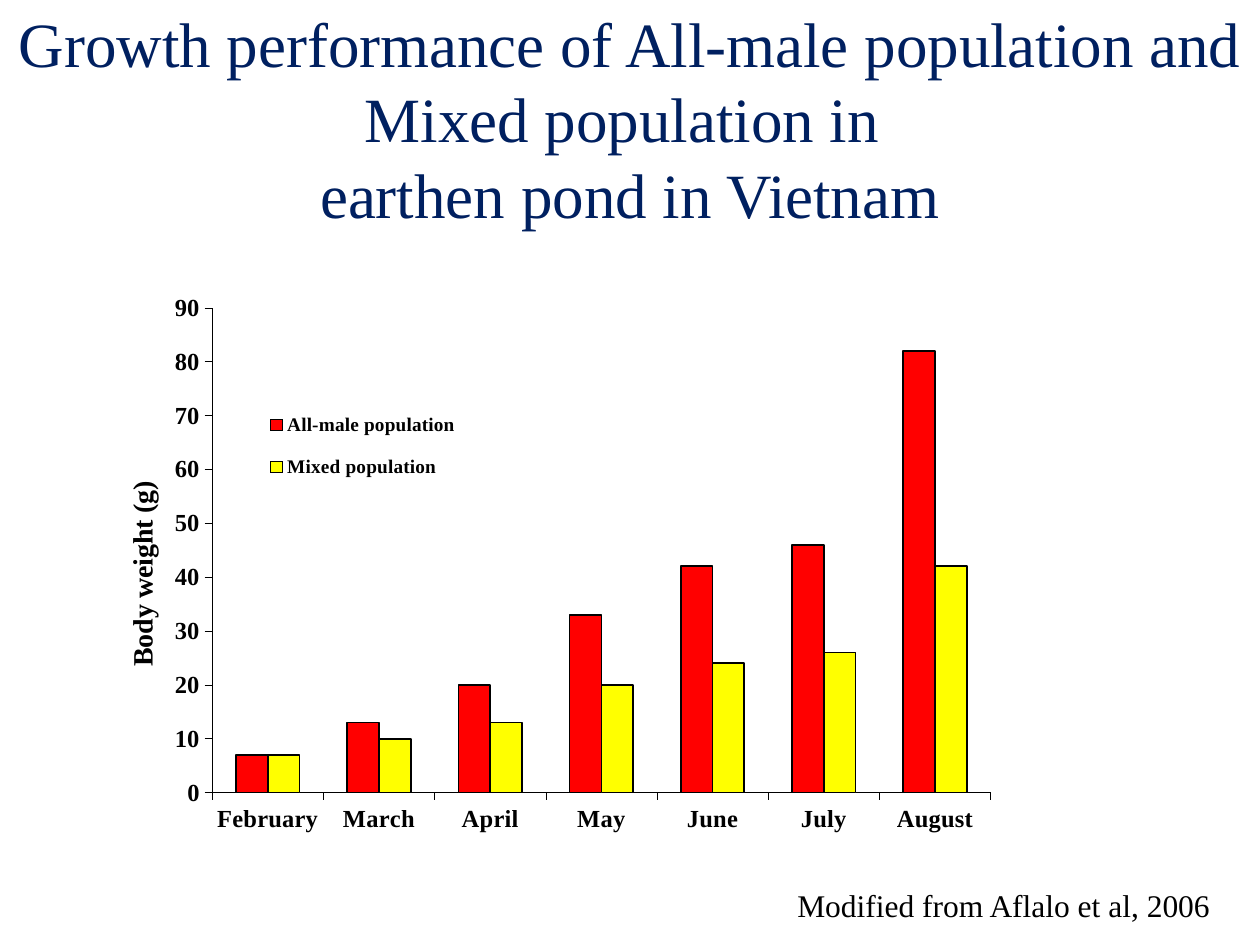
from lxml import etree
from pptx import Presentation
from pptx.chart.data import CategoryChartData
from pptx.dml.color import RGBColor
from pptx.enum.chart import XL_CHART_TYPE, XL_LEGEND_POSITION, XL_TICK_MARK
from pptx.enum.text import MSO_ANCHOR, PP_ALIGN
from pptx.oxml.ns import qn
from pptx.util import Pt

COLUMNS = XL_CHART_TYPE.COLUMN_CLUSTERED
RIGHT = XL_LEGEND_POSITION.RIGHT
OUTSIDE, NO_TICK = XL_TICK_MARK.OUTSIDE, XL_TICK_MARK.NONE
MIDDLE = MSO_ANCHOR.MIDDLE
CENTER, LEFT = PP_ALIGN.CENTER, PP_ALIGN.LEFT

FONT = "Times New Roman"
COLORS = {"title": "002060", "ink": "000000", "male": "FF0000", "mixed": "FFFF00"}

TITLE = ("Growth performance of All-male population and Mixed population in \v"
         "earthen pond in Vietnam")
SOURCE = "Modified from Aflalo et al, 2006"
MONTHS = ["February", "March", "April", "May", "June", "July", "August"]
WEIGHTS = {
    "All-male population": ("male", [7, 13, 20, 33, 42, 46, 82]),
    "Mixed population": ("mixed", [7, 10, 13, 20, 24, 26, 42]),
}


def color(name):
    return RGBColor.from_string(COLORS[name])


def set_font(font, size, name="ink", bold=False):
    font.name = FONT
    font.size = Pt(size)
    font.bold = bold
    font.color.rgb = color(name)


def set_line(line, width):
    line.color.rgb = color("ink")
    line.width = Pt(width)


def add_text(page, text, area, size, name="ink", align=LEFT, wrap=False):
    box = page.shapes.add_textbox(*map(Pt, area))
    frame = box.text_frame
    frame.word_wrap = wrap
    frame.vertical_anchor = MIDDLE
    para = frame.paragraphs[0]
    para.text = text
    para.alignment = align
    set_font(para.font, size, name)


def place(element, successor, inner=False, **fractions):
    """Give a chart part a manual layout in fractions of the chart area."""
    for old in element.findall(qn("c:layout")):
        element.remove(old)
    layout = element.makeelement(qn("c:layout"))
    manual = etree.SubElement(layout, qn("c:manualLayout"))
    if inner:
        etree.SubElement(manual, qn("c:layoutTarget")).set("val", "inner")
    for key in ("x", "y"):
        etree.SubElement(manual, qn(f"c:{key}Mode")).set("val", "edge")
    for key, value in fractions.items():
        etree.SubElement(manual, qn(f"c:{key}")).set("val", str(value))
    element.find(qn(successor)).addprevious(layout)


def style_axis(axis):
    axis.has_major_gridlines = False
    axis.major_tick_mark = OUTSIDE
    axis.minor_tick_mark = NO_TICK
    set_line(axis.format.line, 0.25)
    set_font(axis.tick_labels.font, 14, bold=True)


def add_weight_chart(page, area):
    data = CategoryChartData()
    data.categories = MONTHS
    for name, (_, values) in WEIGHTS.items():
        data.add_series(name, values)
    chart = page.shapes.add_chart(COLUMNS, *map(Pt, area), data).chart
    chart.has_title = False
    chart.font.name = "Arial"
    chart.font.size = Pt(10)

    plot = chart.plots[0]
    plot.gap_width = 150
    plot.overlap = 0
    plot.vary_by_categories = False
    for series, (fill_name, _) in zip(plot.series, WEIGHTS.values()):
        series.format.fill.solid()
        series.format.fill.fore_color.rgb = color(fill_name)
        set_line(series.format.line, 1)

    style_axis(chart.category_axis)
    axis = chart.value_axis
    style_axis(axis)
    axis.minimum_scale, axis.maximum_scale, axis.major_unit = 0, 90, 10
    axis.tick_labels.number_format = "General"
    axis.tick_labels.number_format_is_linked = False
    para = axis.axis_title.text_frame.paragraphs[0]
    para.text = "Body weight (g)"
    set_font(para.font, 16, bold=True)

    chart.has_legend = True
    legend = chart.legend
    legend.position = RIGHT
    legend.include_in_layout = False
    set_font(legend.font, 11, bold=True)

    space = chart.element
    place(space.find(".//" + qn("c:plotArea")), "c:barChart", inner=True,
          x=0.08, y=0.023, w=0.671, h=0.815)
    place(space.find(".//" + qn("c:valAx") + "/" + qn("c:title")), "c:overlay",
          x=0, y=0.306)
    place(space.find(".//" + qn("c:legend")), "c:overlay",
          x=0.115, y=0.168, w=0.19, h=0.175)


def main():
    deck = Presentation()
    deck.slide_width, deck.slide_height = Pt(720), Pt(540)
    page = deck.slides.add_slide(deck.slide_layouts[6])
    add_text(page, TITLE, (0, 0, 720, 134.6), 36, "title", CENTER, True)
    add_weight_chart(page, (68.2, 168, 663, 340))
    add_text(page, SOURCE, (448.5, 502.5, 252.7, 29), 18)
    deck.save("out.pptx")


if __name__ == "__main__":
    main()
